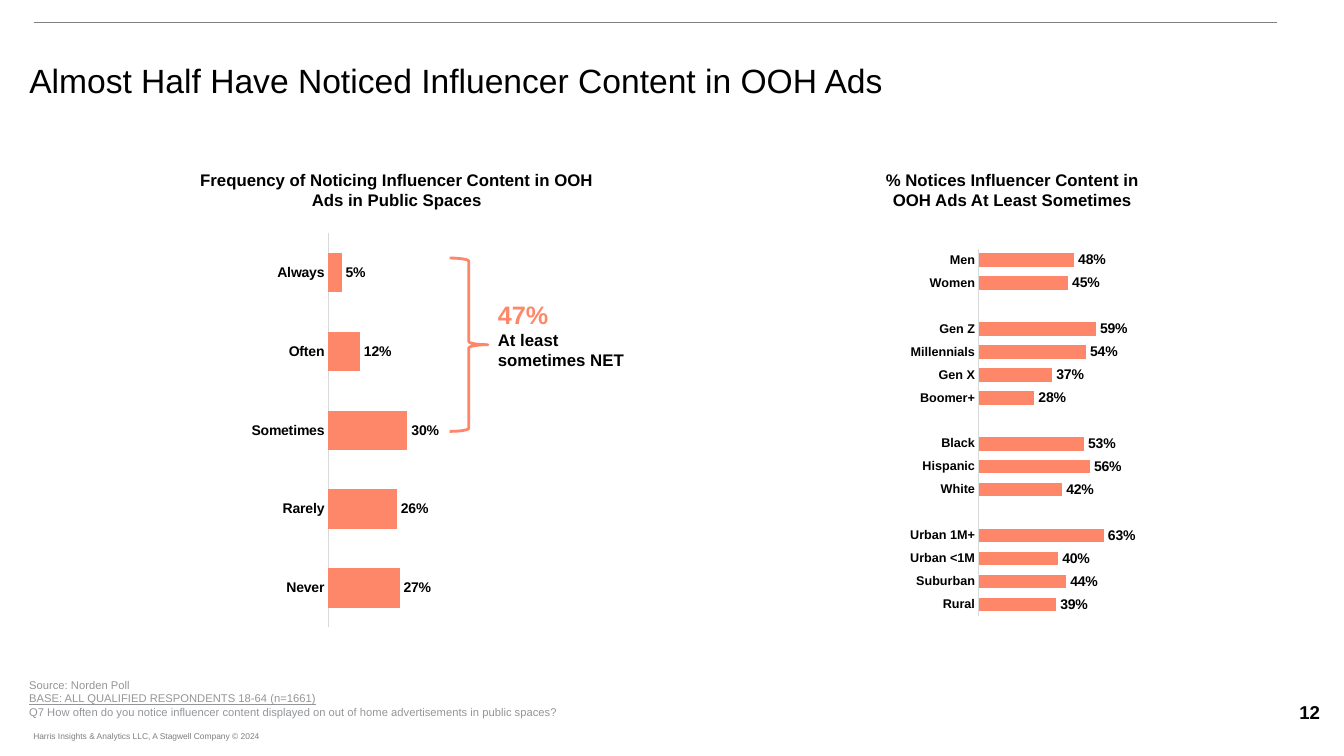
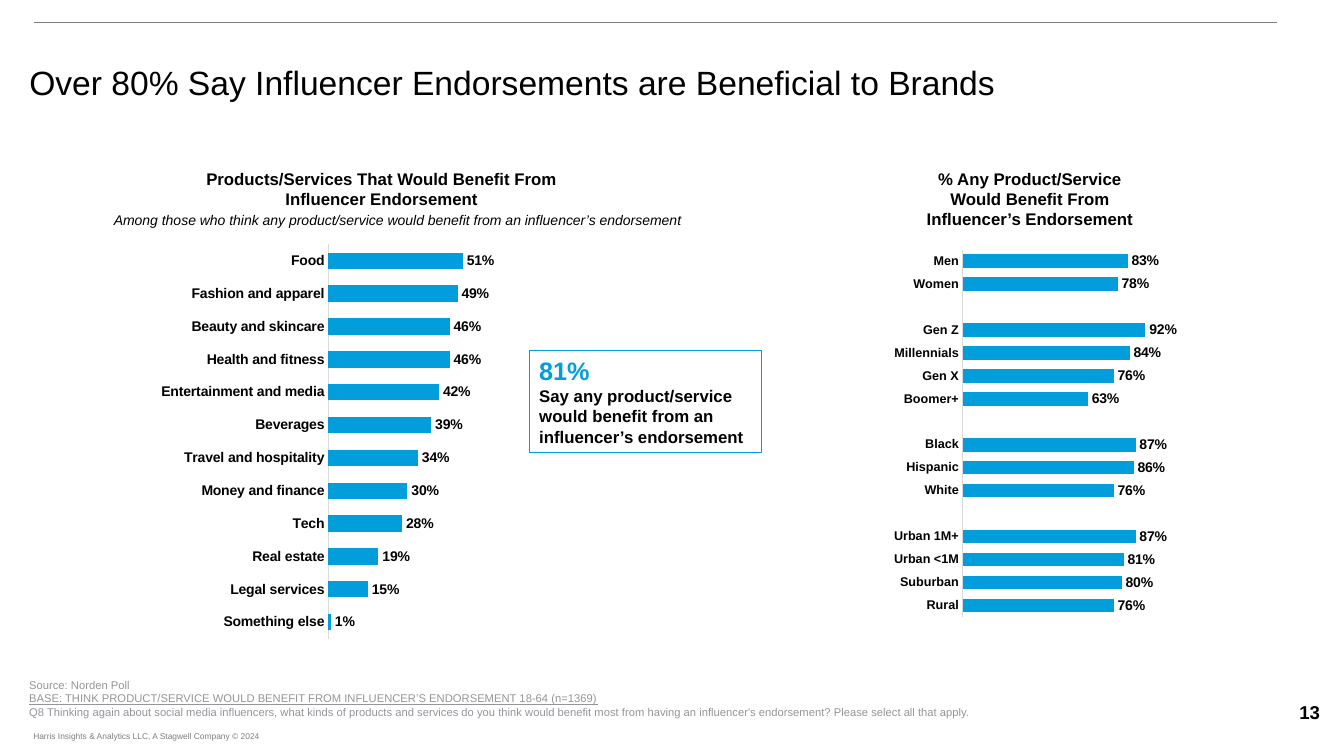
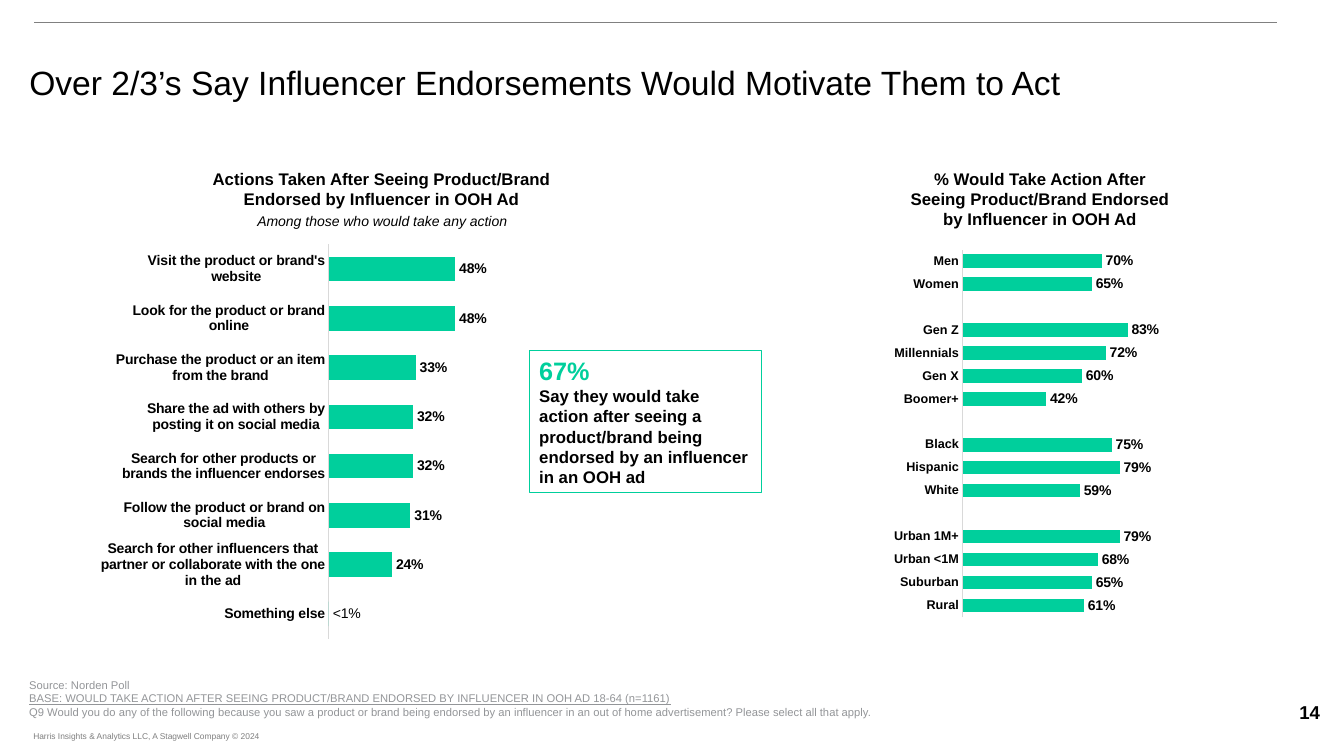
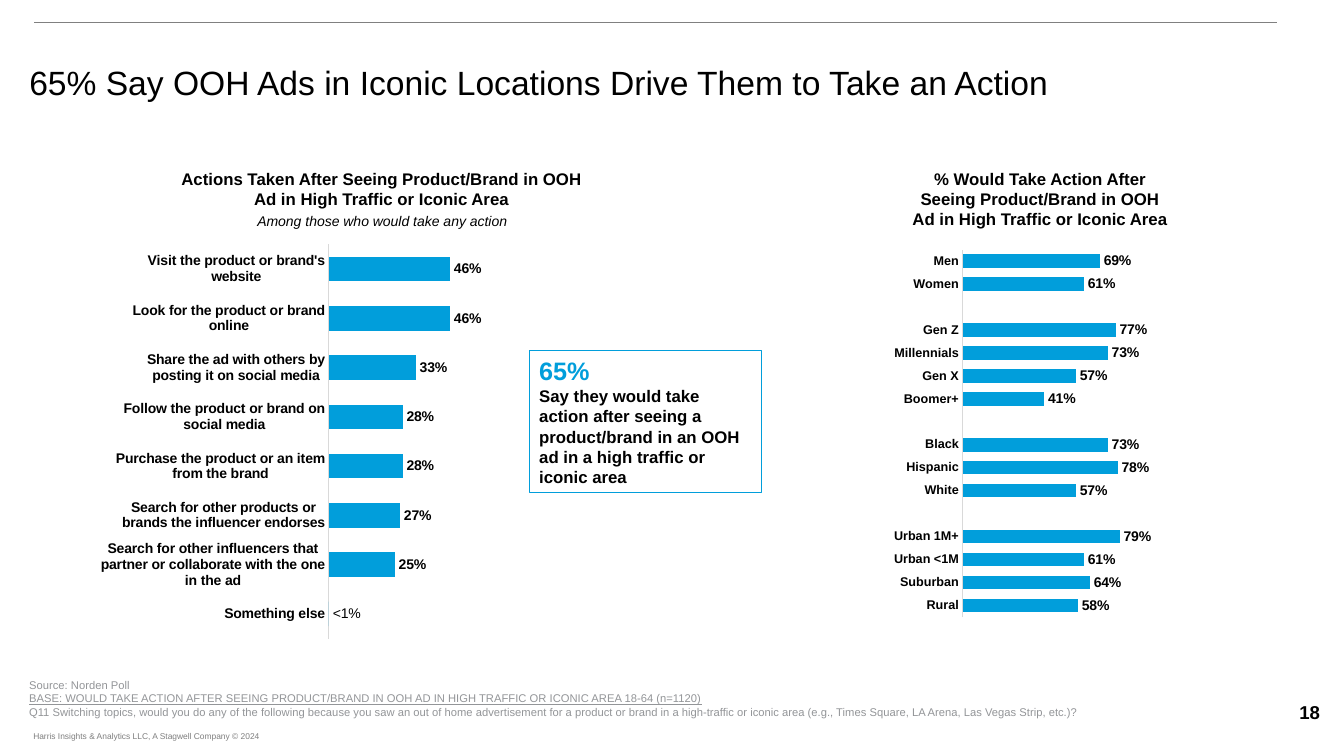
from dataclasses import dataclass
from typing import Optional

from lxml.etree import SubElement
from pptx import Presentation
from pptx.chart.data import CategoryChartData
from pptx.dml.color import RGBColor
from pptx.enum.chart import XL_CHART_TYPE, XL_LABEL_POSITION as LabelPos, XL_TICK_MARK as Tick
from pptx.enum.shapes import MSO_CONNECTOR, MSO_SHAPE
from pptx.enum.text import MSO_ANCHOR, MSO_AUTO_SIZE, PP_ALIGN
from pptx.oxml import parse_xml
from pptx.oxml.ns import nsdecls, qn
from pptx.util import Inches, Pt

FONT = "Arial"
BLACK = RGBColor(0x00, 0x00, 0x00)
RULE_GRAY = RGBColor(0x80, 0x80, 0x80)
FOOTER_GRAY = RGBColor(0x7F, 0x7F, 0x7F)
SOURCE_GRAY = RGBColor(0x93, 0x95, 0x98)
AXIS_GRAY = RGBColor(0xD9, 0xD9, 0xD9)
CORAL = RGBColor(0xFF, 0x87, 0x69)
BLUE = RGBColor(0x01, 0x9E, 0xDB)
GREEN = RGBColor(0x00, 0xCF, 0x9C)

SOURCE = "Source: Norden Poll"
COPYRIGHT = "Harris Insights & Analytics LLC, A Stagwell Company © 2024"
DEMOGRAPHICS = ["Men", "Women", "", "Gen Z", "Millennials", "Gen X", "Boomer+", "",
                "Black", "Hispanic", "White", "", "Urban 1M+", "Urban <1M", "Suburban", "Rural"]

VISIT = "Visit the product or brand's website"
LOOK = "Look for the product or brand online"
PURCHASE = "Purchase the product or an item from the brand"
SHARE = "Share the ad with others by posting it on social media"
SEARCH = "Search for other products or brands the influencer endorses"
FOLLOW = "Follow the product or brand on social media"
PARTNER = ("Search for other influencers that partner or collaborate "
           "with the one in the ad")
OTHER = "Something else"

Box = tuple[float, float, float, float]


@dataclass(frozen=True)
class ChartStyle:
    axis_size: float
    gap: int
    plot: Box


@dataclass(frozen=True)
class Panel:
    heading: str
    heading_at: Box
    chart_at: Box
    categories: list[str]
    percents: list[Optional[int]]
    style: ChartStyle


@dataclass(frozen=True)
class Callout:
    figure: str
    text: str
    at: Box
    brace_at: Optional[Box] = None


@dataclass(frozen=True)
class Page:
    number: int
    title: str
    title_top: float
    color: RGBColor
    answers: Panel
    groups: Panel
    callout: Callout
    base: str
    question: str
    note: str = ""
    note_at: Box = (0.85, 2.06, 5.88, 0.27)


ANSWER_STYLE = ChartStyle(10, 100, (0.44, 0, 0.51, 1))
GROUP_STYLE = ChartStyle(9, 70, (0.47, 0.04, 0.49, 0.93))


def answer_panel(heading: str, bars: dict[str, int],
                 heading_at: Box = (1.66, 1.62, 4.25, 0.5), top: float = 2.42) -> Panel:
    return Panel(heading, heading_at, (1, top, 5.13, 3.92),
                 list(bars), list(bars.values()), ANSWER_STYLE)


def group_panel(heading: str, values: list[int], heading_at: Box = (8.92, 1.62, 2.79, 0.71),
                left: float = 7.66, top: float = 2.32) -> Panel:
    remaining = iter(values)
    percents = [next(remaining) if name else None for name in DEMOGRAPHICS]
    return Panel(heading, heading_at, (left, top, 4.02, 3.92), DEMOGRAPHICS, percents, GROUP_STYLE)


PAGES = [
    Page(12, "Almost Half Have Noticed Influencer Content in OOH Ads", 0.55, CORAL,
         answer_panel("Frequency of Noticing Influencer Content in OOH Ads in Public Spaces",
                      {"Always": 5, "Often": 12, "Sometimes": 30, "Rarely": 26, "Never": 27},
                      (1.81, 1.63, 4.25, 0.5), 2.31),
         group_panel("% Notices Influencer Content in OOH Ads At Least Sometimes",
                     [48, 45, 59, 54, 37, 28, 53, 56, 42, 63, 40, 44, 39],
                     (8.62, 1.63, 2.84, 0.5), 7.82, 2.31),
         Callout("47%", "At least sometimes NET", (4.84, 2.92, 1.57, 0.81),
                 (4.46, 2.56, 0.38, 1.72)),
         "BASE: ALL QUALIFIED RESPONDENTS 18-64 (n=1661)",
         "Q7 How often do you notice influencer content displayed on out of home "
         "advertisements in public spaces?"),
    Page(13, "Over 80% Say Influencer Endorsements are Beneficial to Brands", 0.57, BLUE,
         answer_panel("Products/Services That Would Benefit From Influencer Endorsement",
                      {"Food": 51, "Fashion and apparel": 49, "Beauty and skincare": 46,
                       "Health and fitness": 46, "Entertainment and media": 42,
                       "Beverages": 39, "Travel and hospitality": 34,
                       "Money and finance": 30, "Tech": 28, "Real estate": 19,
                       "Legal services": 15, OTHER: 1}),
         group_panel("% Any Product/Service Would Benefit From Influencer’s Endorsement",
                     [83, 78, 92, 84, 76, 63, 87, 86, 76, 87, 81, 80, 76],
                     (9.01, 1.62, 2.41, 0.71)),
         Callout("81%", "Say any product/service would benefit from an influencer’s endorsement",
                 (5.25, 3.48, 2.3, 1.01)),
         "BASE: THINK PRODUCT/SERVICE WOULD BENEFIT FROM INFLUENCER’S ENDORSEMENT 18-64 (n=1369)",
         "Q8 Thinking again about social media influencers, what kinds of products and services "
         "do you think would benefit most from having an influencer's endorsement? "
         "Please select all that apply.",
         "Among those who think any product/service would benefit from an influencer’s endorsement",
         (1, 2.05, 5.88, 0.27)),
    Page(14, "Over 2/3’s Say Influencer Endorsements Would Motivate Them to Act", 0.57, GREEN,
         answer_panel("Actions Taken After Seeing Product/Brand Endorsed by Influencer in OOH Ad",
                      {VISIT: 48, LOOK: 48, PURCHASE: 33, SHARE: 32, SEARCH: 32,
                       FOLLOW: 31, PARTNER: 24, OTHER: 0}),
         group_panel("% Would Take Action After Seeing Product/Brand Endorsed "
                     "by Influencer in OOH Ad",
                     [70, 65, 83, 72, 60, 42, 75, 79, 59, 79, 68, 65, 61]),
         Callout("67%", "Say they would take action after seeing a product/brand being "
                 "endorsed by an influencer in an OOH ad", (5.25, 3.48, 2.3, 1.41)),
         "BASE: WOULD TAKE ACTION AFTER SEEING PRODUCT/BRAND ENDORSED BY INFLUENCER "
         "IN OOH AD 18-64 (n=1161)",
         "Q9 Would you do any of the following because you saw a product or brand being endorsed "
         "by an influencer in an out of home advertisement? Please select all that apply.",
         "Among those who would take any action"),
    Page(18, "65% Say OOH Ads in Iconic Locations Drive Them to Take an Action", 0.57, BLUE,
         answer_panel("Actions Taken After Seeing Product/Brand in OOH Ad "
                      "in High Traffic or Iconic Area",
                      {VISIT: 46, LOOK: 46, SHARE: 33, FOLLOW: 28, PURCHASE: 28,
                       SEARCH: 27, PARTNER: 25, OTHER: 0}),
         group_panel("% Would Take Action After Seeing Product/Brand in OOH Ad "
                     "in High Traffic or Iconic Area",
                     [69, 61, 77, 73, 57, 41, 73, 78, 57, 79, 61, 64, 58]),
         Callout("65%", "Say they would take action after seeing a product/brand in an OOH ad "
                 "in a high traffic or iconic area", (5.25, 3.48, 2.3, 1.41)),
         "BASE: WOULD TAKE ACTION AFTER SEEING PRODUCT/BRAND IN OOH AD "
         "IN HIGH TRAFFIC OR ICONIC AREA 18-64 (n=1120)",
         "Q11 Switching topics, would you do any of the following because you saw an out of home "
         "advertisement for a product or brand in a high-traffic or iconic area "
         "(e.g., Times Square, LA Arena, Las Vegas Strip, etc.)?",
         "Among those who would take any action"),
]


def inches(at: Box) -> list[int]:
    return [Inches(length) for length in at]


def set_font(font, size: float, color: RGBColor = BLACK, bold: bool = False,
             italic: bool = False) -> None:
    font.name = FONT
    font.size = Pt(size)
    font.color.rgb = color
    font.bold = bold
    font.italic = italic


def add_text(s, at: Box, text: str, size: float, color: RGBColor = BLACK, bold: bool = False,
             italic: bool = False, align: PP_ALIGN = PP_ALIGN.LEFT):
    tf = s.shapes.add_textbox(*inches(at)).text_frame
    tf.word_wrap = True
    tf.auto_size = MSO_AUTO_SIZE.SHAPE_TO_FIT_TEXT
    tf.text = text
    for p in tf.paragraphs:
        p.alignment = align
        for r in p.runs:
            set_font(r.font, size, color, bold, italic)
    return tf


def add_frame(s, page: Page) -> None:
    rule = s.shapes.add_connector(MSO_CONNECTOR.STRAIGHT, Inches(0.34), Inches(0.22),
                                  Inches(12.67), Inches(0.22))
    rule.line.color.rgb = RULE_GRAY
    rule.line.width = Pt(0.5)
    SubElement(rule._element.spPr, qn("a:effectLst"))

    title = s.shapes.title
    title.left, title.top, title.width, title.height = inches((0.19, page.title_top, 12.47, 0.48))
    tf = title.text_frame
    tf.text = page.title
    tf.vertical_anchor = MSO_ANCHOR.MIDDLE
    p = tf.paragraphs[0]
    p.alignment = PP_ALIGN.LEFT
    set_font(p.runs[0].font, 24)

    add_text(s, (12.65, 6.9, 0.68, 0.33), str(page.number), 13.3, bold=True,
             align=PP_ALIGN.CENTER)
    footer = add_text(s, (0.33, 7.2, 2.39, 0.2), COPYRIGHT, 6, FOOTER_GRAY)
    footer.margin_left = 0
    footer.word_wrap = False

    source = add_text(s, (0.19, 6.68, 10.68, 0.5),
                      "\n".join([SOURCE, page.base, page.question]), 8, SOURCE_GRAY)
    source.paragraphs[1].runs[0].font.underline = True


def set_plot_area(chart, plot: Box) -> None:
    area = chart.element.find(".//" + qn("c:plotArea"))
    for layout in area.findall(qn("c:layout")):
        area.remove(layout)
    edges = "".join(f'<c:{name} val="{value}"/>' for name, value in zip("xywh", plot))
    area.insert(0, parse_xml(
        f'<c:layout {nsdecls("c")}><c:manualLayout><c:layoutTarget val="inner"/>'
        f'<c:xMode val="edge"/><c:yMode val="edge"/>{edges}</c:manualLayout></c:layout>'))


def add_panel(s, panel: Panel, color: RGBColor) -> None:
    add_text(s, panel.heading_at, panel.heading, 12, bold=True, align=PP_ALIGN.CENTER)

    data = CategoryChartData(number_format="0%")
    data.categories = panel.categories
    data.add_series("Series 1", [None if v is None else v / 100 for v in panel.percents])
    chart = s.shapes.add_chart(XL_CHART_TYPE.BAR_CLUSTERED, *inches(panel.chart_at), data).chart
    chart.has_legend = False
    chart.has_title = False
    set_font(chart.font, 12, bold=True)
    set_plot_area(chart, panel.style.plot)

    axis = chart.category_axis
    axis.reverse_order = True
    axis.major_tick_mark = axis.minor_tick_mark = Tick.NONE
    axis.format.line.color.rgb = AXIS_GRAY
    axis.format.line.width = Pt(0.75)
    set_font(axis.tick_labels.font, panel.style.axis_size, bold=True)

    scale = chart.value_axis
    scale.minimum_scale, scale.maximum_scale = 0, 1
    scale.has_major_gridlines = False
    scale.visible = False

    plot = chart.plots[0]
    plot.gap_width = panel.style.gap
    plot.vary_by_categories = False
    series = plot.series[0]
    series.format.fill.solid()
    series.format.fill.fore_color.rgb = color
    labels = series.data_labels
    labels.show_value = True
    labels.number_format = "0%"
    labels.number_format_is_linked = False
    labels.position = LabelPos.OUTSIDE_END
    set_font(labels.font, 10, bold=True)

    for i, percent in enumerate(panel.percents):
        if percent == 0:
            label = series.points[i].data_label
            label.text_frame.text = "<1%"
            set_font(label.text_frame.paragraphs[0].runs[0].font, 10)
            label.position = LabelPos.OUTSIDE_END


def add_outline(s, kind: MSO_SHAPE, at: Box, color: RGBColor, width: float):
    shape = s.shapes.add_shape(kind, *inches(at))
    shape.shadow.inherit = False
    shape.fill.background()
    shape.line.color.rgb = color
    shape.line.width = Pt(width)
    return shape


def add_callout(s, callout: Callout, color: RGBColor) -> None:
    if callout.brace_at:
        add_outline(s, MSO_SHAPE.RIGHT_BRACE, callout.brace_at, color, 2)
        box = s.shapes.add_textbox(*inches(callout.at))
    else:
        box = add_outline(s, MSO_SHAPE.RECTANGLE, callout.at, color, 0.75)
    tf = box.text_frame
    tf.word_wrap = True
    tf.auto_size = MSO_AUTO_SIZE.SHAPE_TO_FIT_TEXT
    tf.vertical_anchor = MSO_ANCHOR.TOP
    tf.text = f"{callout.figure}\n{callout.text}"
    for p, size, ink in zip(tf.paragraphs, (18, 12), (color, BLACK)):
        p.alignment = PP_ALIGN.LEFT
        set_font(p.runs[0].font, size, ink, bold=True)


def add_page(prs, page: Page) -> None:
    s = prs.slides.add_slide(prs.slide_layouts[5])
    add_frame(s, page)
    for panel in (page.answers, page.groups):
        add_panel(s, panel, page.color)
    add_callout(s, page.callout, page.color)
    if page.note:
        add_text(s, page.note_at, page.note, 10, italic=True, align=PP_ALIGN.CENTER)


def main() -> None:
    prs = Presentation()
    prs.slide_width = Inches(13.33)
    prs.slide_height = Inches(7.5)
    for page in PAGES:
        add_page(prs, page)
    prs.save("out.pptx")


if __name__ == "__main__":
    main()
